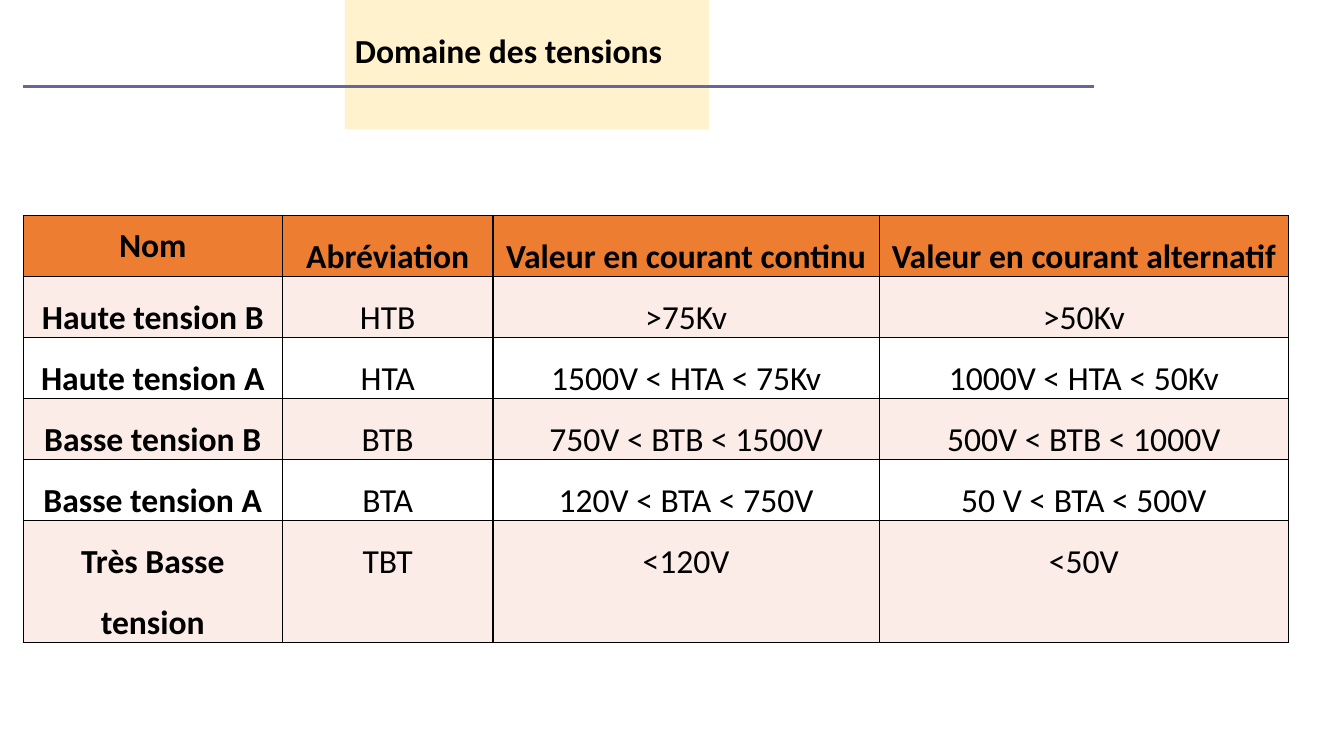
import pptx
import pptx.dml.color
import pptx.enum.shapes
import pptx.enum.text
import pptx.oxml.ns
import pptx.util
from lxml import etree

Pt = pptx.util.Pt
Anchor = pptx.enum.text.MSO_ANCHOR
Align = pptx.enum.text.PP_ALIGN

COLORS = {
    "text": "000000", "title": "FFF2CC", "rule": "666699",
    "header": "ED7D31", "odd": "FCECE8", "even": "FFFFFF", "border": "000000",
}
ROWS = [
    ("Nom", "Abréviation", "Valeur en courant continu", "Valeur en courant alternatif"),
    ("Haute tension B", "HTB", ">75Kv", ">50Kv"),
    ("Haute tension A", "HTA", "1500V < HTA < 75Kv", "1000V < HTA < 50Kv"),
    ("Basse tension B", "BTB", "750V < BTB < 1500V", "500V < BTB < 1000V"),
    ("Basse tension A", "BTA", "120V < BTA < 750V", "50 V < BTA < 500V"),
    ("Très Basse tension", "TBT", "<120V", "<50V"),
]
COL_WIDTHS = [19.28, 15.68, 28.73, 30.46]
ROW_HEIGHTS = [8.07] * 5 + [16.14]
LEFT = 1.73


def rgb(name):
    return pptx.dml.color.RGBColor.from_string(COLORS[name])


class SlideBuilder:
    """Style and current slide; all lengths are percentages of the slide size."""

    font, size = "Calibri", 24

    def __init__(self, prs):
        self.prs = prs
        self.slide = prs.slides.add_slide(prs.slide_layouts[5])

    def x(self, share):
        return round(self.prs.slide_width * share / 100)

    def y(self, share):
        return round(self.prs.slide_height * share / 100)

    def run(self, p, text, bold):
        r = p.add_run()
        r.text = text
        r.font.name, r.font.size, r.font.bold = self.font, Pt(self.size), bold
        r.font.color.rgb = rgb("text")

    def title(self, text, left, top, width, height):
        sp = self.slide.shapes.title
        sp.left, sp.top = self.x(left), self.y(top)
        sp.width, sp.height = self.x(width), self.y(height)
        sp.fill.solid()
        sp.fill.fore_color.rgb = rgb("title")
        tf = sp.text_frame
        tf.word_wrap = True
        tf.auto_size = pptx.enum.text.MSO_AUTO_SIZE.SHAPE_TO_FIT_TEXT
        p = tf.paragraphs[0]
        p.alignment = Align.LEFT
        self.run(p, text, True)

    def rule(self, left, right, top):
        line = self.slide.shapes.add_connector(
            pptx.enum.shapes.MSO_CONNECTOR.STRAIGHT,
            self.x(left), self.y(top), self.x(right), self.y(top))
        line.line.color.rgb = rgb("rule")
        line.line.width = Pt(2.25)
        etree.SubElement(line._element.spPr, pptx.oxml.ns.qn("a:effectLst"))

    def borders(self, cell):
        tc_pr = cell._tc.get_or_add_tcPr()
        for i, side in enumerate(("lnL", "lnR", "lnT", "lnB")):
            ln = etree.Element(pptx.oxml.ns.qn(f"a:{side}"), w=str(Pt(1)))
            fill = etree.SubElement(ln, pptx.oxml.ns.qn("a:solidFill"))
            etree.SubElement(fill, pptx.oxml.ns.qn("a:srgbClr"), val=COLORS["border"])
            tc_pr.insert(i, ln)

    def cell(self, cell, text, row, col):
        header, name = row == 0, col == 0
        cell.fill.solid()
        cell.fill.fore_color.rgb = rgb("header" if header else "odd" if row % 2 else "even")
        cell.margin_left = cell.margin_right = pptx.util.Inches(0.07)
        cell.margin_top = cell.margin_bottom = 0
        cell.vertical_anchor = Anchor.MIDDLE if header or name else Anchor.TOP
        p = cell.text_frame.paragraphs[0]
        p.alignment = Align.CENTER
        if not (header and name):
            p.line_spacing = 1.5
        if not header:
            p.space_after = Pt(10)
        self.run(p, text, header or name)
        self.borders(cell)

    def table(self, rows, left, top, widths, heights):
        table = self.slide.shapes.add_table(
            len(rows), len(widths), self.x(left), self.y(top),
            self.x(sum(widths)), self.y(sum(heights))).table
        for column, width in zip(table.columns, widths):
            column.width = self.x(width)
        for row, height in zip(table.rows, heights):
            row.height = self.y(height)
        for i, texts in enumerate(rows):
            for j, text in enumerate(texts):
                self.cell(table.cell(i, j), text, i, j)


def main():
    prs = pptx.Presentation()
    prs.slide_width, prs.slide_height = pptx.util.Inches(13.33), pptx.util.Inches(7.5)
    s = SlideBuilder(prs)
    s.title("Domaine des tensions", 25.66, 3.33, 27.08, 6.67)
    s.rule(LEFT, 81.4, 11.47)
    s.table(ROWS, LEFT, 28.53, COL_WIDTHS, ROW_HEIGHTS)
    prs.save("out.pptx")


if __name__ == "__main__":
    main()
